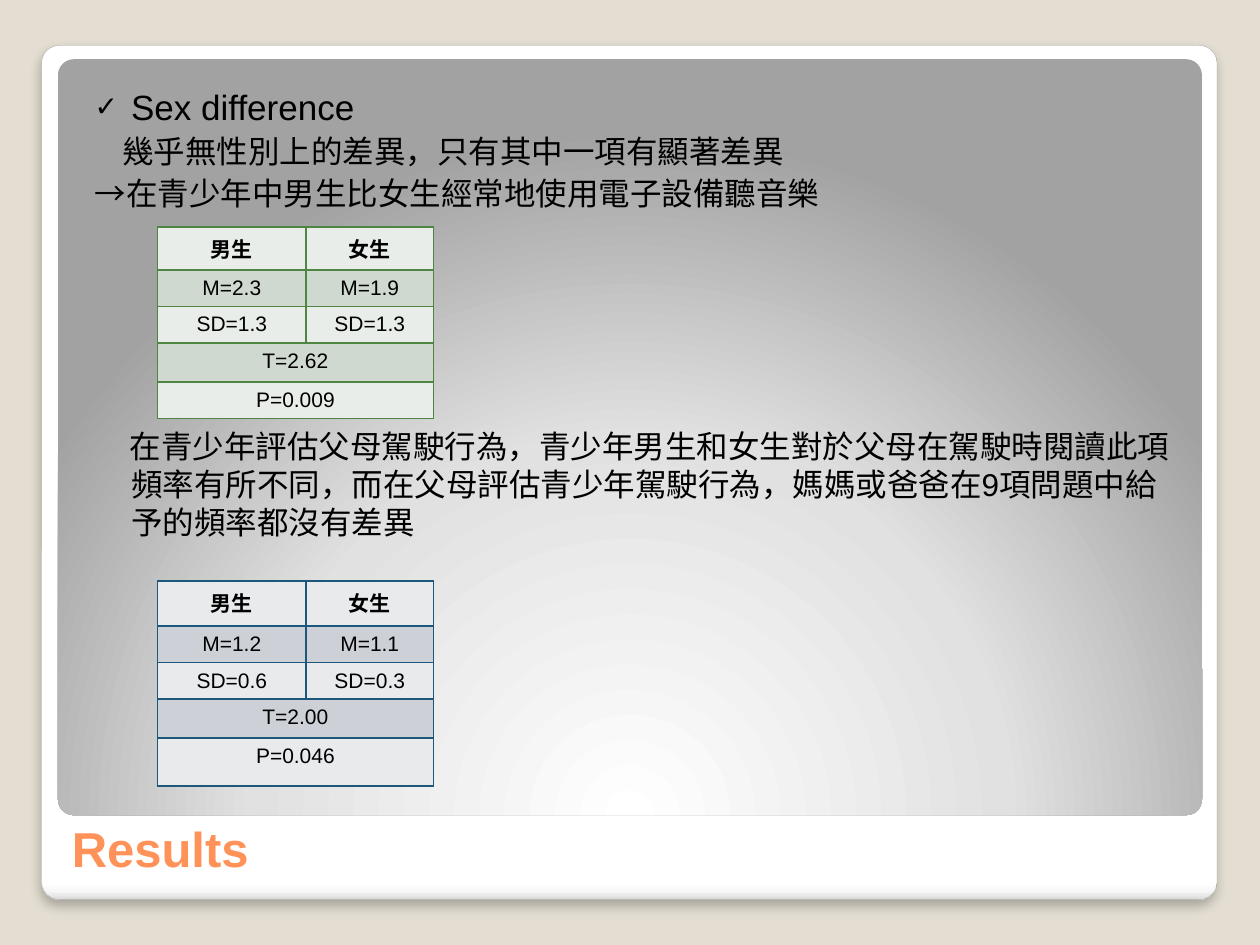
import pptx
import pptx.util
import pptx.dml.color
import pptx.enum.shapes
import pptx.enum.text
import pptx.oxml
import pptx.oxml.ns
from pptx.util import Inches

FONT = "Arial"
ALIGN = pptx.enum.text.PP_ALIGN
ANCHOR = pptx.enum.text.MSO_ANCHOR
NAMESPACE = pptx.oxml.ns.nsdecls("a")

BACKGROUND = "E3DED1"
TITLE = "Results"
TITLE_BOX = (0.47, 5.86, 8.95, 1.15)
BODY_BOX = (0.55, 0.58, 8.95, 4.58)
HANGING = 0.29

# text, size, space before in points, first-line indent, bullet
BODY = [
    ("Sex difference", 20, 2.5, -0.29, "✓"),
    ("幾乎無性別上的差異，只有其中一項有顯著差異", 18, 2.5, -0.07, None),
    ("→在青少年中男生比女生經常地使用電子設備聽音樂", 18, 2.5, -0.29, None),
    ("在青少年評估父母駕駛行為，青少年男生和女生對於父母在駕駛時閱讀此項頻率有所不同，"
     "而在父母評估青少年駕駛行為，媽媽或爸爸在9項問題中給予的頻率都沒有差異",
     18, 123, -0.01, None),
]

PANELS = [
    {"box": (0.33, 0.36, 9.33, 6.78),
     "stops": [(0, "FFFFFF"), (98, "FFFFFF"), (99, "F7F7F7"), (100, "DADADA")],
     "direction": '<a:lin ang="5400000" scaled="0"/>', "outlined": True},
    {"box": (0.46, 0.47, 9.08, 6),
     "stops": [(0, "FFFFFF"), (55, "E1E1E1"), (100, "A2A2A2")],
     "direction": '<a:path path="circle"><a:fillToRect l="50000" t="175000" '
                  'r="50000" b="-75000"/></a:path>', "outlined": False},
]

COLUMN_WIDTHS = [1.18, 1.01]
TABLES = [
    {"top": 1.8, "border": "4E8542", "bands": ("E9EDE9", "D0D9CF"),
     "heights": [0.34, 0.29, 0.29, 0.31, 0.29],
     "rows": [("男生", "女生"), ("M=2.3", "M=1.9"), ("SD=1.3", "SD=1.3"),
              ("T=2.62",), ("P=0.009",)]},
    {"top": 4.61, "border": "1B587C", "bands": ("E8EAEC", "CDD1D7"),
     "heights": [0.36, 0.29, 0.28, 0.31, 0.38],
     "rows": [("男生", "女生"), ("M=1.2", "M=1.1"), ("SD=0.6", "SD=0.3"),
              ("T=2.00",), ("P=0.046",)]},
]


def color(value):
    return pptx.dml.color.RGBColor.from_string(value)


def set_attributes(target, values):
    for name, value in values.items():
        setattr(target, name, value)


def place(shape, box):
    names = ("left", "top", "width", "height")
    set_attributes(shape, dict(zip(names, map(Inches, box))))


def write(paragraph, text, size, text_color="000000", bold=False):
    run = paragraph.add_run()
    run.text = text
    set_attributes(run.font, {"name": FONT, "size": pptx.util.Pt(size), "bold": bold})
    run.font.color.rgb = color(text_color)


def xml(markup):
    """Parse markup whose first tag has the marker NS for its namespace."""
    return pptx.oxml.parse_xml(markup.replace("NS", NAMESPACE, 1))


def add_panel(slide, position, panel):
    """Add a rounded gradient panel behind the placeholders."""
    shape = slide.shapes.add_shape(
        pptx.enum.shapes.MSO_SHAPE.ROUNDED_RECTANGLE, *map(Inches, panel["box"]))
    shape.adjustments[0] = 0.021
    shape.shadow.inherit = False
    shape.fill.background()
    properties = shape._element.spPr
    stops = "".join(f'<a:gs pos="{at * 1000}"><a:srgbClr val="{value}"/></a:gs>'
                    for at, value in panel["stops"])
    properties.replace(
        properties.find(pptx.oxml.ns.qn("a:noFill")),
        xml(f'<a:gradFill NS rotWithShape="1"><a:gsLst>{stops}</a:gsLst>'
            f'{panel["direction"]}</a:gradFill>'))
    if panel["outlined"]:
        shape.line.color.rgb = color("A4A4A4")
        shape.line.width = pptx.util.Pt(0.16)
        properties.find(pptx.oxml.ns.qn("a:effectLst")).append(xml(
            '<a:outerShdw NS blurRad="76200" dist="50800" dir="5400000" '
            'rotWithShape="0"><a:srgbClr val="000000"><a:alpha val="25000"/>'
            '</a:srgbClr></a:outerShdw>'))
    else:
        shape.line.fill.background()
    slide.shapes._spTree.insert(2 + position, shape._element)


def add_title(slide):
    title = slide.shapes.title
    place(title, TITLE_BOX)
    set_attributes(title.text_frame, {
        "vertical_anchor": ANCHOR.BOTTOM, "word_wrap": True,
        "auto_size": pptx.enum.text.MSO_AUTO_SIZE.NONE})
    paragraph = title.text_frame.paragraphs[0]
    paragraph.alignment = ALIGN.LEFT
    write(paragraph, TITLE, 28, "FF9258", True)


def add_body(slide):
    body = slide.placeholders[1]
    place(body, BODY_BOX)
    frame = body.text_frame
    set_attributes(frame, {
        "margin_left": Inches(0.2), "margin_top": Inches(0.1),
        "margin_right": Inches(0.1), "margin_bottom": Inches(0.05),
        "vertical_anchor": ANCHOR.TOP, "word_wrap": True,
        "auto_size": pptx.enum.text.MSO_AUTO_SIZE.NONE})
    for index, (text, size, space, indent, bullet) in enumerate(BODY):
        paragraph = frame.add_paragraph() if index else frame.paragraphs[0]
        set_attributes(paragraph, {"alignment": ALIGN.LEFT,
                                   "space_before": pptx.util.Pt(space)})
        properties = paragraph._p.get_or_add_pPr()
        properties.set("marL", str(Inches(HANGING)))
        properties.set("indent", str(Inches(indent)))
        if bullet:
            properties.append(xml('<a:buSzPct NS val="80000"/>'))
            properties.append(xml(f'<a:buFont NS typeface="{FONT}"/>'))
            properties.append(xml(f'<a:buChar NS char="{bullet}"/>'))
        else:
            properties.append(xml("<a:buNone NS/>"))
        write(paragraph, text, size)


def format_cell(cell, fill, border):
    cell.fill.solid()
    cell.fill.fore_color.rgb = color(fill)
    properties = cell._tc.get_or_add_tcPr()
    for index, side in enumerate("LRTB"):
        properties.insert(index, xml(
            f'<a:ln{side} NS w="12700"><a:solidFill><a:srgbClr val="{border}"/>'
            f'</a:solidFill></a:ln{side}>'))


def add_result_table(slide, content):
    heights = content["heights"]
    table = slide.shapes.add_table(
        len(heights), len(COLUMN_WIDTHS), Inches(1.25), Inches(content["top"]),
        Inches(sum(COLUMN_WIDTHS)), Inches(sum(heights))).table
    set_attributes(table, {"first_row": False, "horz_banding": False})
    for column, width in zip(table.columns, COLUMN_WIDTHS):
        column.width = Inches(width)
    for index, (height, texts) in enumerate(zip(heights, content["rows"])):
        table.rows[index].height = Inches(height)
        cells = list(table.rows[index].cells)
        for cell in cells:
            format_cell(cell, content["bands"][index % 2], content["border"])
        if len(texts) == 1:
            cells[0].merge(cells[-1])
        for cell, text in zip(cells, texts):
            paragraph = cell.text_frame.paragraphs[0]
            paragraph.alignment = ALIGN.CENTER
            write(paragraph, text, 12, bold=index == 0)


def main():
    presentation = pptx.Presentation()
    set_attributes(presentation, {"slide_width": Inches(10), "slide_height": Inches(7.5)})
    slide = presentation.slides.add_slide(presentation.slide_layouts[1])
    slide.background.fill.solid()
    slide.background.fill.fore_color.rgb = color(BACKGROUND)
    for position, panel in enumerate(PANELS):
        add_panel(slide, position, panel)
    add_title(slide)
    add_body(slide)
    for content in TABLES:
        add_result_table(slide, content)
    presentation.save("out.pptx")


if __name__ == "__main__":
    main()
